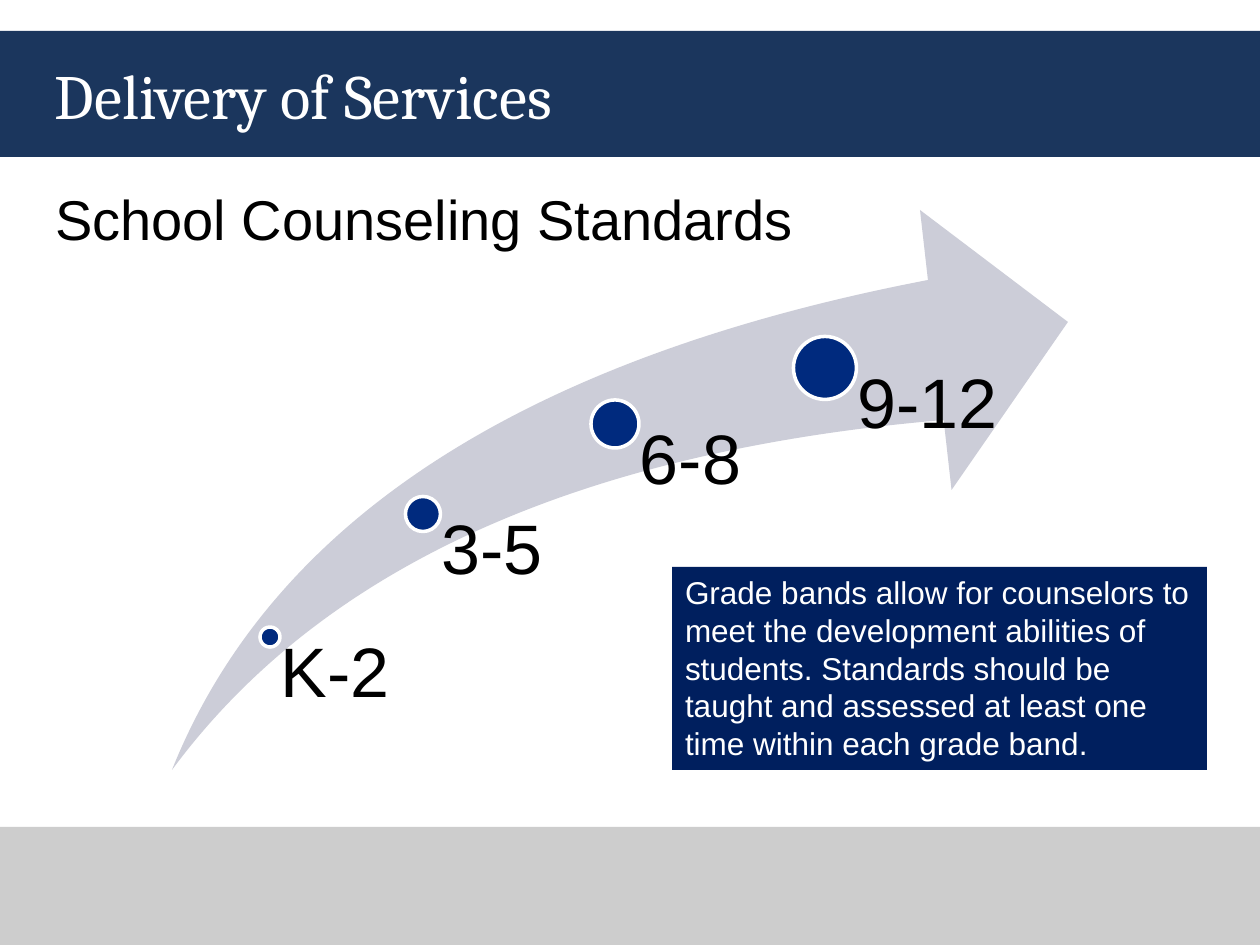
import pptx
import pptx.dml.color
import pptx.enum.shapes
import pptx.enum.text
import pptx.util

EMU_PER_PX = 914400 / 126
SHAPE = pptx.enum.shapes.MSO_SHAPE
ANCHOR = pptx.enum.text.MSO_ANCHOR
INSET_X, INSET_Y = 13, 6

# Label, dot centre x and y, dot diameter, label width
GRADE_BANDS = [
    ("K-2", 270, 637, 20, 154),
    ("3-5", 423, 514, 35, 188),
    ("6-8", 615, 424, 48, 188),
    ("9-12", 825, 368, 63, 262),
]


def px(length):
    return pptx.util.Emu(round(length * EMU_PER_PX))


def color(hex_string):
    return pptx.dml.color.RGBColor.from_string(hex_string)


def add_filled(slide, kind, box, fill, outline=None):
    shape = slide.shapes.add_shape(kind, *map(px, box))
    shape.shadow.inherit = False
    shape.fill.solid()
    shape.fill.fore_color.rgb = color(fill)
    if outline:
        shape.line.color.rgb = color(outline)
        shape.line.width = pptx.util.Pt(2)
    else:
        shape.line.fill.background()
    return shape


def set_text(shape, text, size, font="Arial", fill="000000", anchor=ANCHOR.TOP,
             insets=(INSET_X, INSET_Y, INSET_X, INSET_Y)):
    """Write one left-aligned paragraph; insets run left, top, right, bottom."""
    frame = shape.text_frame
    frame.word_wrap = True
    frame.vertical_anchor = anchor
    (frame.margin_left, frame.margin_top,
     frame.margin_right, frame.margin_bottom) = map(px, insets)
    frame.text = text
    paragraph = frame.paragraphs[0]
    paragraph.alignment = pptx.enum.text.PP_ALIGN.LEFT
    run_font = paragraph.runs[0].font
    run_font.name = font
    run_font.size = pptx.util.Pt(size)
    run_font.color.rgb = color(fill)
    return paragraph


def add_header(slide, left, top, width, height):
    add_filled(slide, SHAPE.RECTANGLE, (left, top, width, height), "1B365D")
    title = slide.shapes.add_textbox(px(left + 42), px(top), px(width - 116), px(height))
    set_text(title, "Delivery of Services", 36, "Cambria", "FFFFFF", ANCHOR.MIDDLE)


def add_subtitle(slide, left, top, width, height):
    subtitle = slide.shapes.add_textbox(*map(px, (left, top, width, height)))
    set_text(subtitle, "School Counseling Standards", 32)


def add_grade_arrow(slide, left, top, width, height):
    """Swoosh arrow carrying one growing dot and label for each grade band."""
    arrow = add_filled(slide, SHAPE.SWOOSH_ARROW, (left, top, width, height), "CCCDD8")
    arrow.adjustments[0] = 0.25
    arrow.adjustments[1] = 0.25
    for text, center_x, center_y, diameter, label_width in GRADE_BANDS:
        radius = diameter / 2
        add_filled(slide, SHAPE.OVAL,
                   (center_x - radius, center_y - radius, diameter, diameter),
                   "002A7E", "FFFFFF")
        label = slide.shapes.add_textbox(px(center_x), px(center_y), px(label_width),
                                         px(top + height - center_y))
        paragraph = set_text(label, text, 40, insets=(radius + 1, 0, 0, 0))
        paragraph.line_spacing = 0.9


def add_note(slide, left, top, width, height):
    note = add_filled(slide, SHAPE.RECTANGLE, (left, top, width, height), "001F5E")
    set_text(note, "Grade bands allow for counselors to meet the development abilities "
             "of students. Standards should be taught and assessed at least one time "
             "within each grade band.", 18, fill="FFFFFF")


def main():
    presentation = pptx.Presentation()
    presentation.slide_width = px(1260)
    presentation.slide_height = px(945)
    slide = presentation.slides.add_slide(presentation.slide_layouts[6])
    add_header(slide, 0, 31, 1260, 126)
    add_filled(slide, SHAPE.RECTANGLE, (0, 827, 1260, 118), "CDCDCD")
    add_subtitle(slide, 42, 179, 1155, 624)
    add_grade_arrow(slide, 172, 210, 896, 560)
    add_note(slide, 672, 567, 535, 203)
    presentation.save("out.pptx")


if __name__ == "__main__":
    main()
